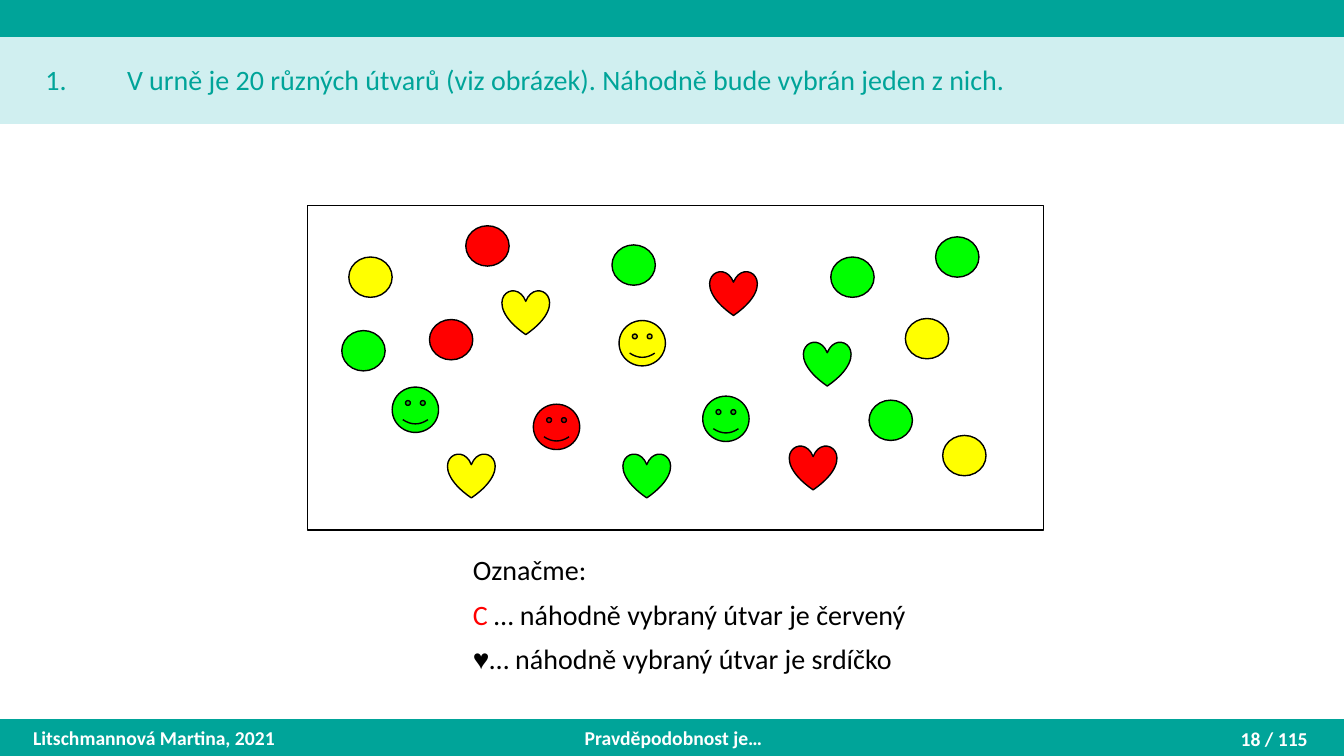
from lxml.etree import SubElement
from pptx import Presentation
from pptx.dml.color import RGBColor
from pptx.enum.shapes import MSO_SHAPE
from pptx.enum.text import MSO_ANCHOR, MSO_AUTO_SIZE, PP_ALIGN
from pptx.oxml.ns import qn
from pptx.util import Inches, Pt

TEAL = RGBColor(0x00, 0xA4, 0x99)
PALE = RGBColor(0xD0, 0xEF, 0xF0)
WHITE = RGBColor(0xFF, 0xFF, 0xFF)
BLACK = RGBColor(0, 0, 0)
RED = RGBColor(0xFF, 0, 0)
GREEN = RGBColor(0, 0xFF, 0)
YELLOW = RGBColor(0xFF, 0xFF, 0)

QUESTION = "V urně je 20 různých útvarů (viz obrázek). Náhodně bude vybrán jeden z nich."
# Each legend line is a list of (text, colour, font)
LEGEND = [
    [("Označme:", BLACK, "Calibri")],
    [("C", RED, "Calibri"), (" … náhodně vybraný útvar je červený", BLACK, "Calibri")],
    [("♥", BLACK, "Times New Roman"), ("… náhodně vybraný útvar je srdíčko", BLACK, "Calibri")],
]
# text, left, top, width, alignment
FOOTER = [
    ("Litschmannová Martina, 2021", 0.23, 7.14, 3, PP_ALIGN.LEFT),
    ("Pravděpodobnost je…", 4.43, 7.14, 4.5, PP_ALIGN.CENTER),
    ("18 / 115", 10.07, 7.15, 3, PP_ALIGN.RIGHT),
]
# top, height, colour
BANDS = [(7.14, 0.36, TEAL), (0.36, 0.86, PALE), (0, 0.36, TEAL)]
URN = (3.05, 2.04, 7.3, 3.22)
# kind: (width, height, [(left, top, colour), ...])
FIGURES = {
    MSO_SHAPE.OVAL: (0.43, 0.4, [
        (3.46, 2.55, YELLOW), (4.26, 3.17, RED), (3.39, 3.28, GREEN),
        (6.07, 2.43, GREEN), (8.62, 3.97, GREEN), (8.24, 2.55, GREEN),
        (4.62, 2.24, RED), (8.98, 3.16, YELLOW), (9.35, 4.32, YELLOW),
        (9.28, 2.35, GREEN)]),
    MSO_SHAPE.SMILEY_FACE: (0.46, 0.45, [
        (3.89, 3.84, GREEN), (5.29, 4.01, RED), (6.14, 3.18, YELLOW),
        (6.97, 3.93, GREEN)]),
    MSO_SHAPE.HEART: (0.47, 0.44, [
        (4.98, 2.88, YELLOW), (4.44, 4.5, YELLOW), (6.18, 4.5, GREEN),
        (7.04, 2.69, RED), (7.97, 3.39, GREEN), (7.83, 4.42, RED)]),
}


def add_figure(shapes, kind, box, fill, outline):
    figure = shapes.add_shape(kind, *map(Inches, box))
    figure.shadow.inherit = False
    if fill is None:
        figure.fill.background()
    else:
        figure.fill.solid()
        figure.fill.fore_color.rgb = fill
    figure.line.color.rgb = outline
    figure.line.width = Pt(1)
    return figure


def add_run(paragraph, text, size, color, font="Calibri", bold=False):
    run = paragraph.add_run()
    run.text = text
    run.font.size = Pt(size)
    run.font.name = font
    run.font.bold = bold
    run.font.color.rgb = color


def place(holder, box, anchor):
    holder.left, holder.top, holder.width, holder.height = map(Inches, box)
    frame = holder.text_frame
    frame.word_wrap = True
    frame.auto_size = MSO_AUTO_SIZE.NONE
    frame.vertical_anchor = anchor
    return frame


def set_marker(paragraph, margin, indent, marker, **attributes):
    properties = paragraph._p.get_or_add_pPr()
    properties.set("marL", str(Inches(margin)))
    properties.set("indent", str(Inches(indent)))
    SubElement(properties, qn(marker), attributes)


def main():
    deck = Presentation()
    deck.slide_width, deck.slide_height = Inches(13.33), Inches(7.5)
    slide = deck.slides.add_slide(deck.slide_layouts[1])
    title, legend = slide.shapes.title, slide.placeholders[1]

    for top, height, color in BANDS:
        band = add_figure(slide.shapes, MSO_SHAPE.RECTANGLE, (0, top, 13.33, height), color, color)
        title.element.addprevious(band.element)  # behind the text

    question = place(title, (0.35, 0.4, 11.88, 0.81), MSO_ANCHOR.MIDDLE).paragraphs[0]
    set_marker(question, 0.81, -0.81, "a:buFont", typeface="+mj-lt")
    set_marker(question, 0.81, -0.81, "a:buAutoNum", type="arabicPeriod")
    question.alignment = PP_ALIGN.LEFT
    question.line_spacing = 0.9
    add_run(question, QUESTION, 20, TEAL)

    frame = place(legend, (0.65, 1.47, 12.17, 5.28), MSO_ANCHOR.BOTTOM)
    for index, line in enumerate(LEGEND):
        paragraph = frame.add_paragraph() if index else frame.paragraphs[0]
        set_marker(paragraph, 3.94, 0, "a:buNone")
        paragraph.line_spacing = 0.9
        paragraph.space_before = Pt(10 if index else 0)
        for text, color, font in line:
            add_run(paragraph, text, 20, color, font)

    for text, left, top, width, alignment in FOOTER:
        note = slide.shapes.add_textbox(0, 0, 0, 0)
        paragraph = place(note, (left, top, width, 0.36), MSO_ANCHOR.MIDDLE).paragraphs[0]
        paragraph.alignment = alignment
        add_run(paragraph, text, 14, WHITE, bold=True)

    urn = slide.shapes.add_group_shape().shapes
    for kind, (width, height, spots) in FIGURES.items():
        for left, top, color in spots:
            add_figure(urn, kind, (left, top, width, height), color, BLACK)
    add_figure(urn, MSO_SHAPE.RECTANGLE, URN, None, BLACK)

    deck.save("out.pptx")


if __name__ == "__main__":
    main()
